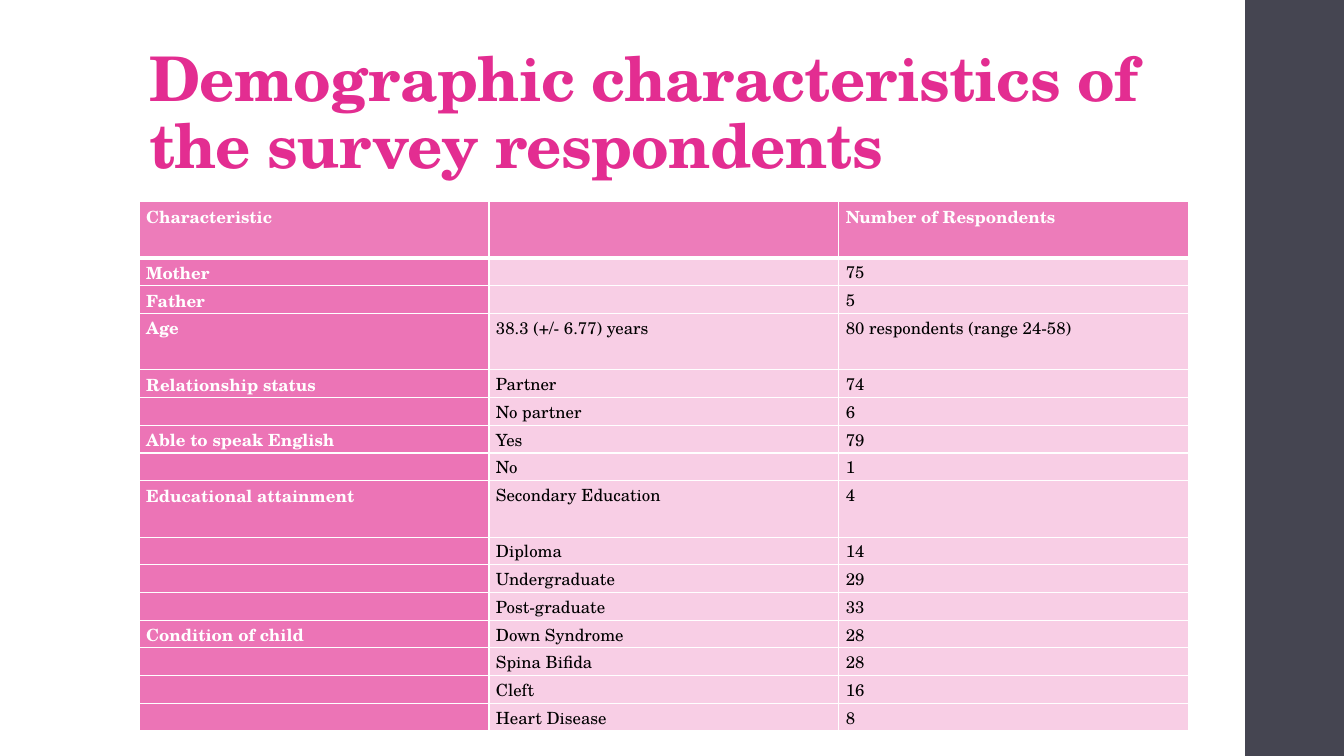
from dataclasses import dataclass

from lxml import etree
from pptx import Presentation
from pptx import util as u
from pptx.dml import color
from pptx.enum import shapes, text
from pptx.oxml import ns

PINK = color.RGBColor(0xE3, 0x2D, 0x91)
SLATE = color.RGBColor(0x45, 0x45, 0x51)
WHITE = color.RGBColor(0xFF, 0xFF, 0xFF)
BLACK = color.RGBColor(0x00, 0x00, 0x00)
FONT = "TeX Gyre Schola"
COLUMN_WIDTH = 3.47
SHORT_ROW = 0.275
TALL_ROW = 0.56


@dataclass(frozen=True)
class Row:
    characteristic: str
    category: str
    respondents: str
    height: float = SHORT_ROW


@dataclass(frozen=True)
class CellStyle:
    opacity: int
    ink: color.RGBColor
    bold: bool
    bottom_border: int = 1


HEADER = CellStyle(62, WHITE, True, 3)
LABEL = CellStyle(66, WHITE, True)
BODY = CellStyle(23, BLACK, False)

ROWS = [
    Row("Characteristic", "", "Number of Respondents", TALL_ROW),
    Row("Mother", "", "75"),
    Row("Father", "", "5"),
    Row("Age", "38.3 (+/- 6.77) years", "80 respondents (range 24-58)", TALL_ROW),
    Row("Relationship status", "Partner", "74"),
    Row("", "No partner", "6"),
    Row("Able to speak English", "Yes", "79"),
    Row("", "No", "1"),
    Row("Educational attainment", "Secondary Education", "4", TALL_ROW),
    Row("", "Diploma", "14"),
    Row("", "Undergraduate", "29"),
    Row("", "Post-graduate", "33"),
    Row("Condition of child", "Down Syndrome", "28"),
    Row("", "Spina Bifida", "28"),
    Row("", "Cleft", "16"),
    Row("", "Heart Disease", "8"),
]


def add_borders(cell, top: int, bottom: int) -> None:
    properties = cell._tc.get_or_add_tcPr()
    widths = {"lnL": 1, "lnR": 1, "lnT": top, "lnB": bottom}
    for position, (side, width) in enumerate(widths.items()):
        line = etree.Element(ns.qn(f"a:{side}"), w=str(u.Pt(width)))
        fill = etree.SubElement(line, ns.qn("a:solidFill"))
        etree.SubElement(fill, ns.qn("a:srgbClr"), val=str(WHITE))
        properties.insert(position, line)


def fill_cell(cell, content: str, style: CellStyle, top_border: int) -> None:
    cell.margin_left = cell.margin_right = u.Inches(0.07)
    cell.margin_top = cell.margin_bottom = 0
    cell.fill.solid()
    cell.fill.fore_color.rgb = PINK
    tint = cell._tc.tcPr.find(".//" + ns.qn("a:srgbClr"))
    etree.SubElement(tint, ns.qn("a:alpha"), val=str(style.opacity * 1000))
    add_borders(cell, top_border, style.bottom_border)
    para = cell.text_frame.paragraphs[0]
    para.line_spacing = 1.07
    if not content:
        etree.SubElement(para._p, ns.qn("a:endParaRPr"), sz="1200")
        return
    para.text = content
    font = para.runs[0].font
    font.name, font.size, font.bold = FONT, u.Pt(12), style.bold
    font.color.rgb = style.ink


def add_side_panel(page) -> None:
    panel = page.shapes.add_shape(
        shapes.MSO_SHAPE.RECTANGLE, u.Inches(12.35), 0, u.Inches(0.98), u.Inches(7.5)
    )
    panel.shadow.inherit = False
    panel.fill.solid()
    panel.fill.fore_color.rgb = SLATE
    panel.line.fill.background()


def format_title(page) -> None:
    title = page.shapes.title
    title.left, title.top = u.Inches(1.38), u.Inches(0.29)
    title.width, title.height = u.Inches(10.6), u.Inches(1.56)
    frame = title.text_frame
    frame.text = "Demographic characteristics of the survey respondents"
    frame.word_wrap = True
    frame.auto_size = text.MSO_AUTO_SIZE.NONE
    frame.vertical_anchor = text.MSO_ANCHOR.BOTTOM
    frame.margin_left = frame.margin_right = u.Inches(0.1)
    frame.margin_top, frame.margin_bottom = u.Inches(0.03), u.Inches(0.05)
    para = frame.paragraphs[0]
    para.alignment = text.PP_ALIGN.LEFT
    para.line_spacing = 0.9
    span = para.runs[0]
    span.font.name, span.font.size, span.font.bold = FONT, u.Pt(44), True
    span.font.color.rgb = PINK
    span._r.get_or_add_rPr().set("spc", "-50")


def add_respondent_table(page) -> None:
    height = sum(row.height for row in ROWS)
    table = page.shapes.add_table(
        len(ROWS), 3, u.Inches(1.38), u.Inches(2),
        u.Inches(3 * COLUMN_WIDTH), u.Inches(height),
    ).table
    table.first_col = True
    table.horz_banding = False
    for column in table.columns:
        column.width = u.Inches(COLUMN_WIDTH)
    for index, row in enumerate(ROWS):
        table.rows[index].height = u.Inches(row.height)
        styles = (HEADER,) * 3 if index == 0 else (LABEL, BODY, BODY)
        top_border = HEADER.bottom_border if index == 1 else 1
        contents = (row.characteristic, row.category, row.respondents)
        for cell, content, style in zip(table.rows[index].cells, contents, styles):
            fill_cell(cell, content, style, top_border)


def main() -> None:
    deck = Presentation()
    deck.slide_width, deck.slide_height = u.Inches(13.33), u.Inches(7.5)
    page = deck.slides.add_slide(deck.slide_layouts[5])
    add_side_panel(page)
    format_title(page)
    add_respondent_table(page)
    deck.save("out.pptx")


if __name__ == "__main__":
    main()
